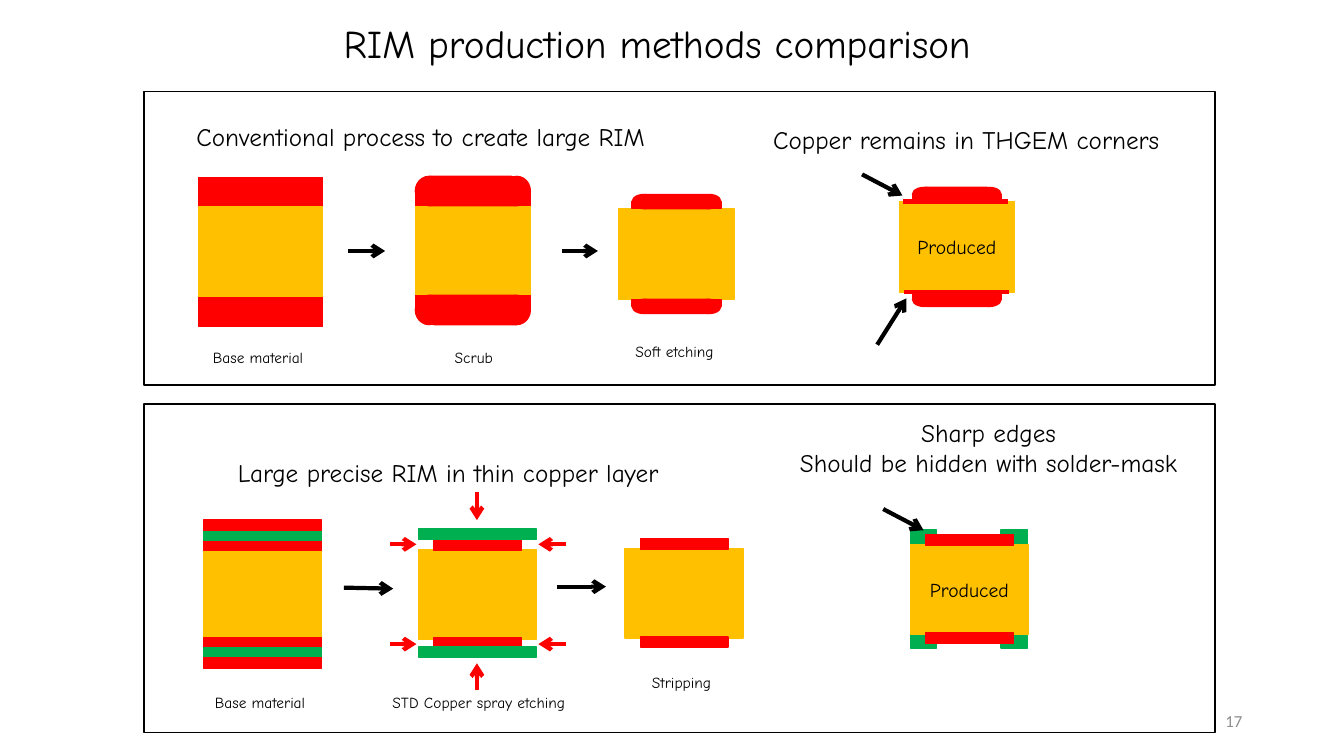
import pptx
import pptx.util
import pptx.dml.color
import pptx.enum.shapes
import pptx.enum.text
import pptx.oxml.ns
import lxml.etree

PX = 9144  # 100 px to the inch
BLACK = pptx.dml.color.RGBColor(0x00, 0x00, 0x00)
GREY = pptx.dml.color.RGBColor(0x8C, 0x8C, 0x8C)
COPPER = pptx.dml.color.RGBColor(0xFF, 0x00, 0x00)
CORE = pptx.dml.color.RGBColor(0xFF, 0xC0, 0x00)
MASK = pptx.dml.color.RGBColor(0x00, 0xB0, 0x50)
SHAPE = pptx.enum.shapes.MSO_SHAPE
ALIGN = pptx.enum.text.PP_ALIGN
ANCHOR = pptx.enum.text.MSO_ANCHOR

deck = pptx.Presentation()
deck.slide_width = 1333 * PX
deck.slide_height = 750 * PX
slide = deck.slides.add_slide(deck.slide_layouts[6])


def add_block(x, y, w, h, color, kind=SHAPE.RECTANGLE, rotation=0):
    """Add a filled shape, or a black frame when color is None."""
    block = slide.shapes.add_shape(kind, x * PX, y * PX, w * PX, h * PX)
    block.shadow.inherit = False
    block.rotation = rotation
    block.line.width = pptx.util.Pt(1)
    if color is None:
        block.fill.background()
        block.line.color.rgb = BLACK
    else:
        block.fill.solid()
        block.fill.fore_color.rgb = color
        block.line.color.rgb = color
    return block


def write(holder, lines, size, align=ALIGN.CENTER, anchor=ANCHOR.TOP,
          color=BLACK, font="Comic Neue"):
    frame = holder.text_frame
    frame.word_wrap = True
    frame.vertical_anchor = anchor
    for number, line in enumerate(lines):
        paragraph = frame.add_paragraph() if number else frame.paragraphs[0]
        paragraph.alignment = align
        run = paragraph.add_run()
        run.text = line
        run.font.size = pptx.util.Pt(size)
        run.font.name = font
        run.font.color.rgb = color


# Title, headings and step captions
captions = [
    (331, 14, 690, 57, 28, ALIGN.LEFT, ["RIM production methods comparison"]),
    (185, 115, 508, 42, 18, ALIGN.LEFT, ["Conventional process to create large RIM"]),
    (757, 118, 425, 42, 18, ALIGN.LEFT, ["Copper remains in THGEM corners"]),
    (209, 449, 471, 41, 18, ALIGN.CENTER, ["Large precise RIM in thin copper layer"]),
    (765, 409, 431, 72, 18, ALIGN.CENTER,
     ["Sharp edges", "Should be hidden with solder-mask"]),
    (139, 340, 234, 30, 11, ALIGN.CENTER, ["Base material"]),
    (353, 340, 234, 30, 11, ALIGN.CENTER, ["Scrub"]),
    (552, 335, 234, 30, 11, ALIGN.CENTER, ["Soft etching"]),
    (141, 683, 234, 29, 11, ALIGN.CENTER, ["Base material"]),
    (358, 683, 234, 29, 11, ALIGN.CENTER, ["STD Copper spray etching"]),
    (559, 663, 234, 29, 11, ALIGN.CENTER, ["Stripping"]),
]
for x, y, w, h, size, align, lines in captions:
    write(slide.shapes.add_textbox(x * PX, y * PX, w * PX, h * PX), lines, size, align)

page_number = slide.shapes.add_textbox(942 * PX, 695 * PX, 300 * PX, 40 * PX)
write(page_number, ["17"], 12, ALIGN.RIGHT, ANCHOR.MIDDLE, GREY, "Calibri")

# Conventional process: base material
for y, h, color in [(176, 29, COPPER), (205, 91, CORE), (295, 29, COPPER)]:
    add_block(197, y, 123, h, color)

# Conventional process: cores between copper caps with rounded outer corners
CORE_W = 114
rounded_steps = [
    # core x, y, height; cap inset, height; middle inset, corner and side widths
    (412, 204, 89, 0, 29, 14, 27, 23),
    (614, 207, 90, 13, 14, 12, 23, 19),
    (892, 200, 90, 13, 14, 12, 23, 19),
]
for core_x, core_y, core_h, inset, cap_h, middle, corner_w, side_w in rounded_steps:
    rounded_core = add_block(core_x, core_y, CORE_W, core_h, CORE)
    left = core_x + inset
    cap_w = CORE_W - 2 * inset
    right = left + cap_w
    side_h = cap_h // 2
    for cap_y, side_y, turn in [
        (core_y - cap_h, core_y - side_h, 0),
        (core_y + core_h, core_y + core_h, 180),
    ]:
        add_block(left + middle, cap_y, cap_w - 2 * middle, cap_h, COPPER,
                  SHAPE.ROUND_1_RECTANGLE, turn)
        for corner_x, side_x in [(left, left), (right - corner_w, right - side_w)]:
            add_block(corner_x, cap_y, corner_w, cap_h, COPPER, SHAPE.OVAL)
            add_block(side_x, side_y, side_w, side_h, COPPER)
write(rounded_core, ["Produced"], 14, anchor=ANCHOR.MIDDLE)

# Precise process: green corners behind the produced core
for x in (903, 993):
    for y in (526, 627):
        add_block(x, y, 26, 16, MASK)

# Precise process: cores, with narrow copper pads after the first step
for core_x, core_y, has_pads in [
    (202, 545, False), (415, 545, True), (620, 544, True), (903, 540, True),
]:
    flat_core = add_block(core_x, core_y, 117, 89, CORE)
    if has_pads:
        add_block(core_x + 15, core_y - 10, 87, 11, COPPER)
        add_block(core_x + 15, core_y + 88, 87, 10, COPPER)
write(flat_core, ["Produced"], 14, anchor=ANCHOR.MIDDLE)

# Precise process: full-width layers of the first two steps
for x, y, color in [
    (202, 536, COPPER), (202, 526, MASK), (202, 516, COPPER),
    (202, 633, COPPER), (202, 643, MASK), (202, 653, COPPER),
    (415, 525, MASK), (415, 642, MASK),
]:
    add_block(x, y, 117, 10, color)

# Panel frames
add_block(143, 91, 1062, 291, None)
add_block(143, 401, 1062, 326, None)

# Copper left in the corners, step arrows, pointers and etching spray
strokes = [
    (896, 200, 1000, 200, COPPER, False),
    (897, 290, 1001, 290, COPPER, False),
    (345, 249, 382, 249, BLACK, True),
    (557, 249, 593, 249, BLACK, True),
    (855, 173, 895, 194, BLACK, True),
    (870, 342, 899, 296, BLACK, True),
    (341, 583, 390, 584, BLACK, True),
    (552, 582, 601, 582, BLACK, True),
    (876, 505, 916, 526, BLACK, True),
    (473, 488, 473, 516, COPPER, True),
    (473, 685, 473, 658, COPPER, True),
]
for y in (540, 639):
    strokes += [(561, y, 534, y, COPPER, True), (387, y, 413, y, COPPER, True)]
for x1, y1, x2, y2, color, has_head in strokes:
    stroke = slide.shapes.add_connector(
        pptx.enum.shapes.MSO_CONNECTOR.STRAIGHT, x1 * PX, y1 * PX, x2 * PX, y2 * PX)
    stroke.line.color.rgb = color
    stroke.line.width = pptx.util.Pt(3)
    if has_head:
        lxml.etree.SubElement(stroke.line._get_or_add_ln(),
                              pptx.oxml.ns.qn("a:tailEnd"), type="arrow")
    lxml.etree.SubElement(stroke._element.spPr, pptx.oxml.ns.qn("a:effectLst"))

deck.save("out.pptx")
